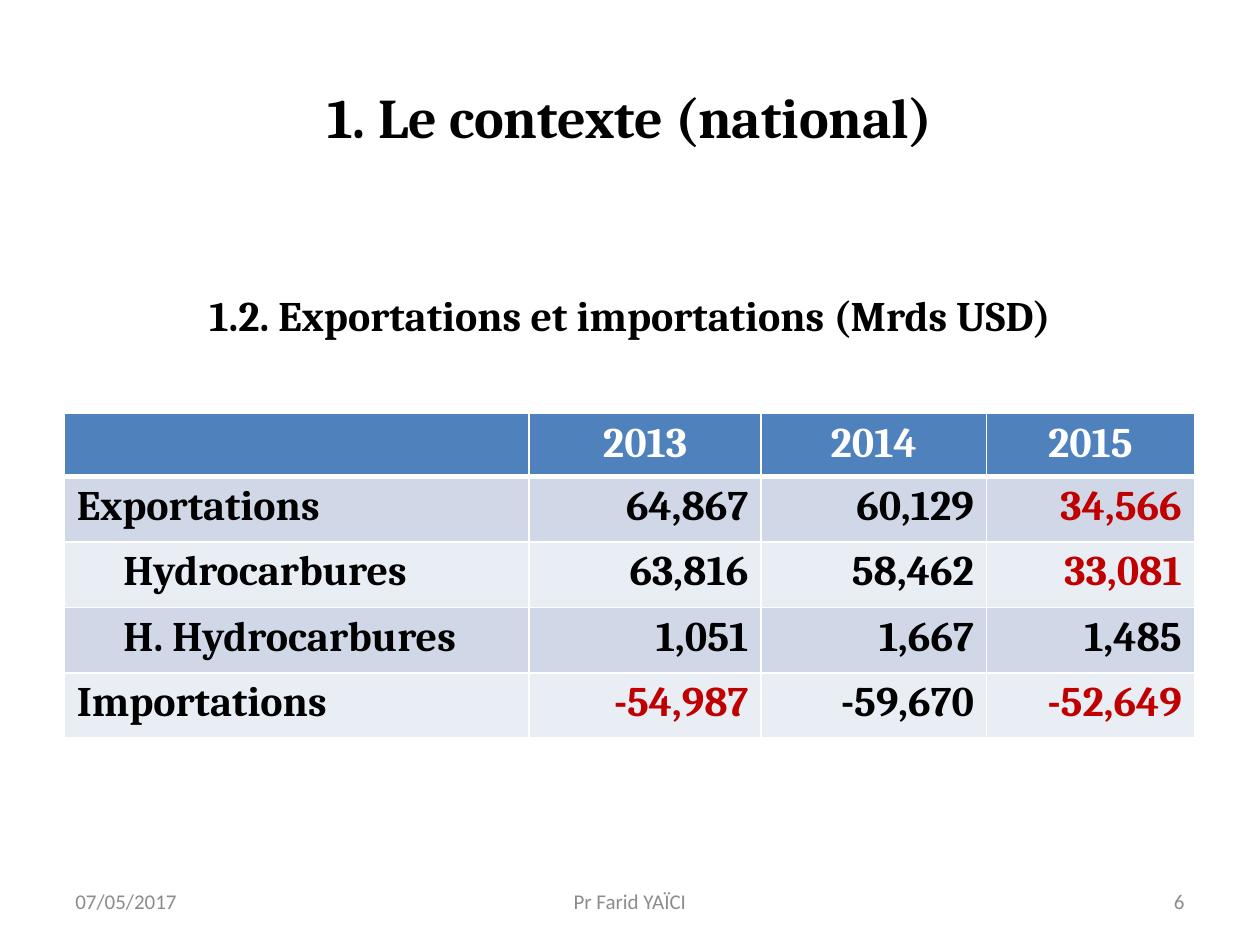
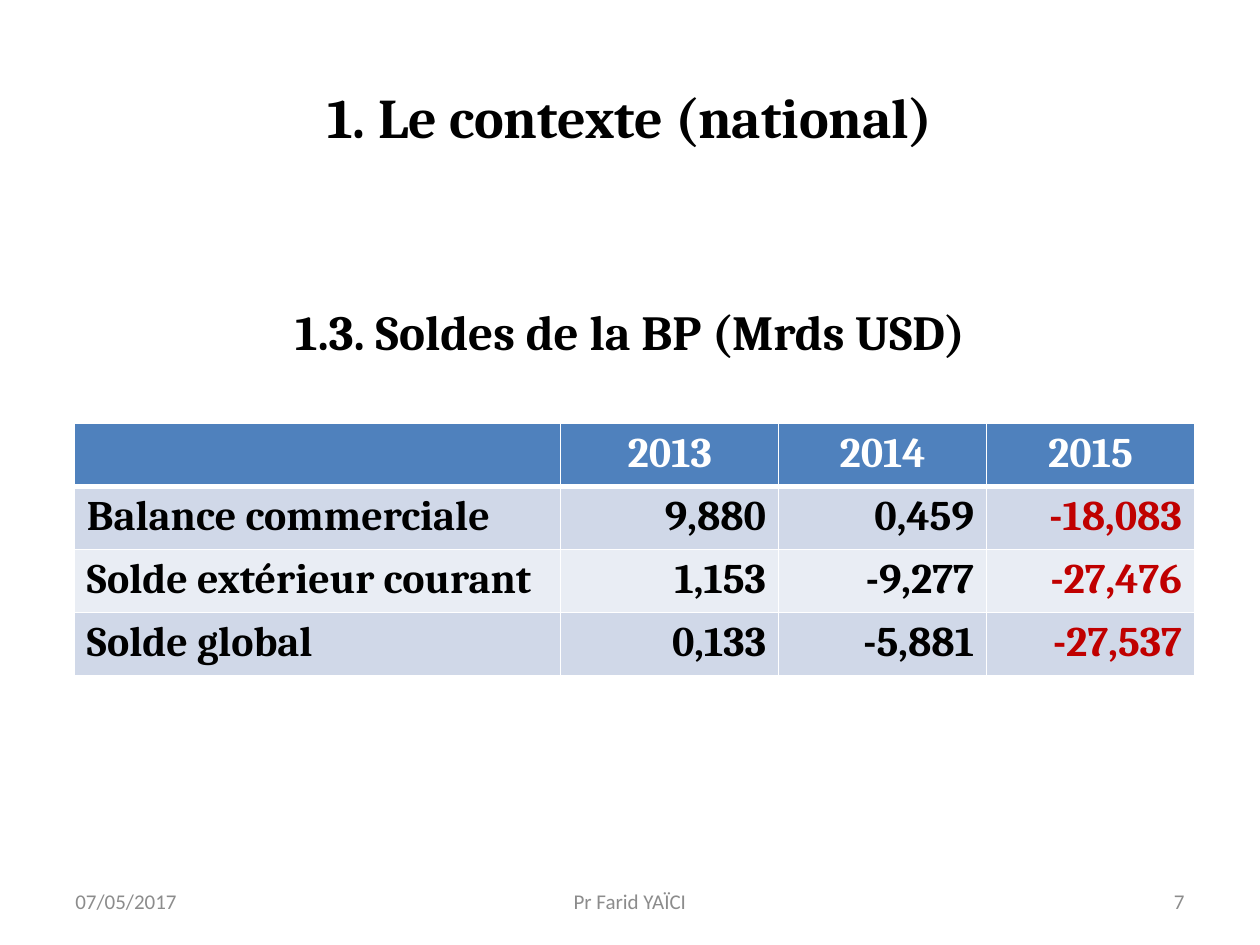
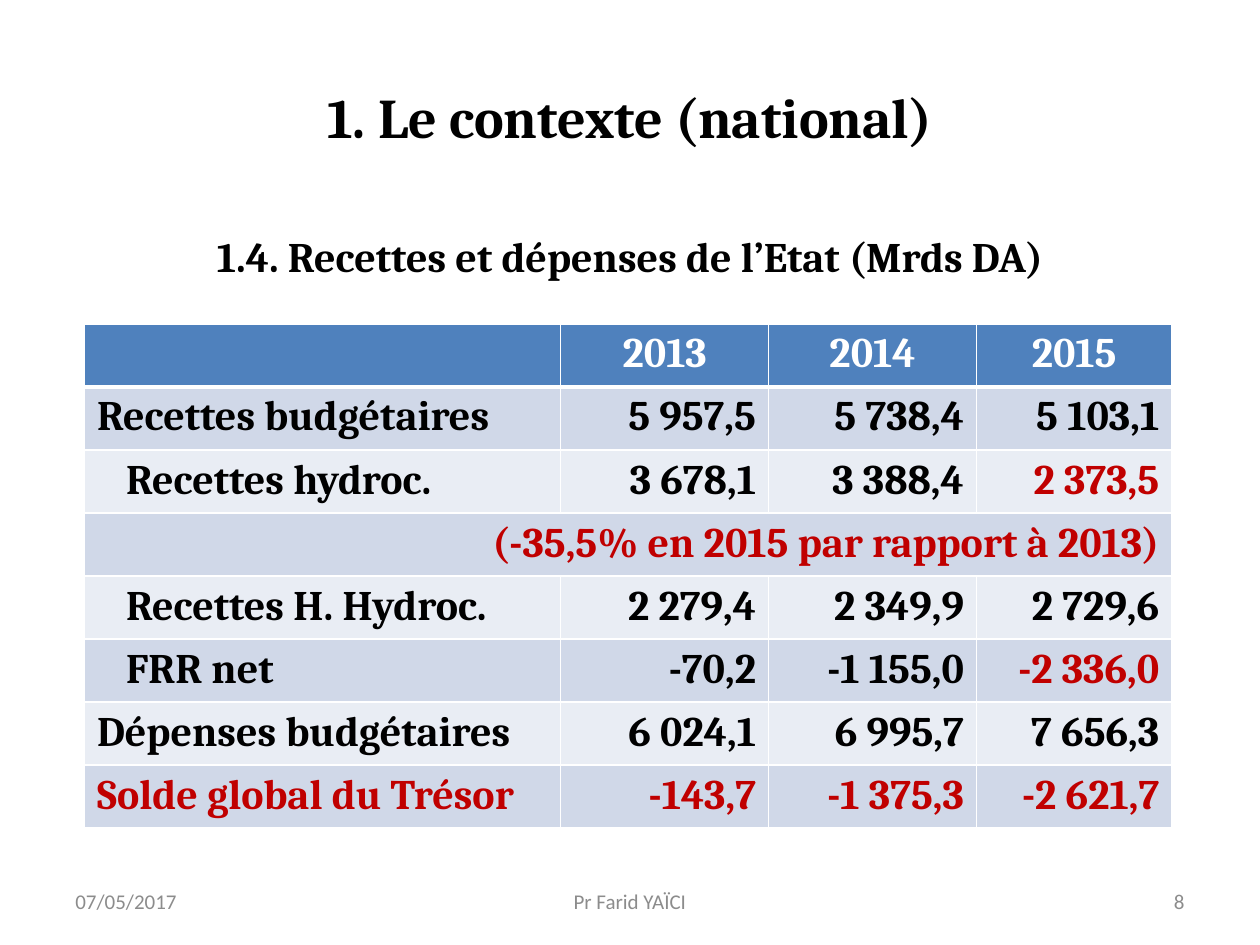
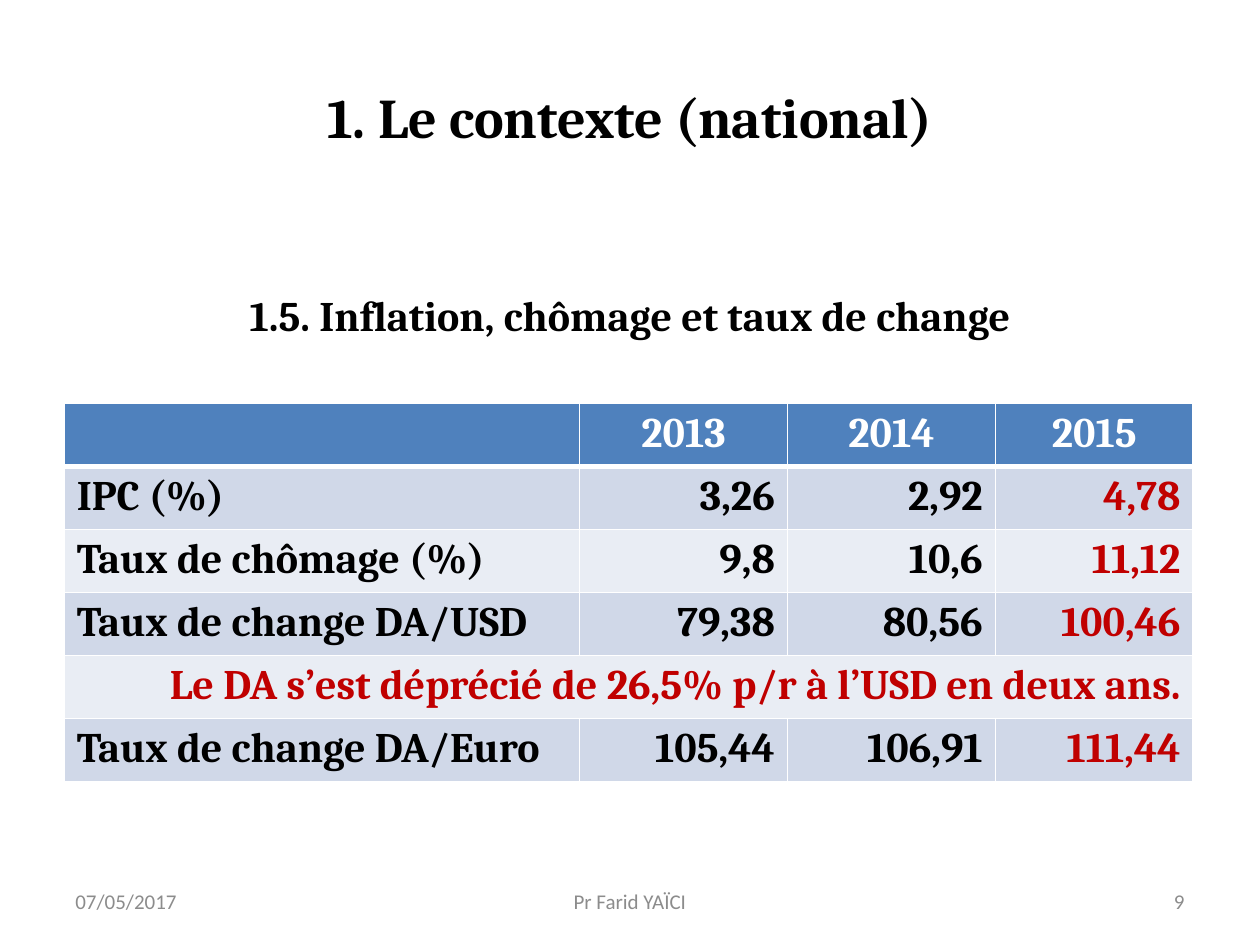
from dataclasses import dataclass

from lxml.etree import SubElement
from pptx import Presentation
from pptx.dml.color import RGBColor
from pptx.enum.text import MSO_ANCHOR, PP_ALIGN
from pptx.oxml.ns import qn
from pptx.util import Inches, Pt

BLACK = RGBColor(0x00, 0x00, 0x00)
WHITE = RGBColor(0xFF, 0xFF, 0xFF)
RED = RGBColor(0xC0, 0x00, 0x00)
GREY = RGBColor(0x8C, 0x8C, 0x8C)
HEADER_BLUE = RGBColor(0x4F, 0x81, 0xBD)
BANDS = (RGBColor(0xD0, 0xD8, 0xE8), RGBColor(0xE9, 0xED, 0xF4))

SERIF, SANS = "Cambria", "Calibri"
LEFT, CENTER, RIGHT = PP_ALIGN.LEFT, PP_ALIGN.CENTER, PP_ALIGN.RIGHT

TITLE = "1. Le contexte (national)"
DATE, AUTHOR = "07/05/2017", "Pr Farid YAÏCI"
YEARS = ("2013", "2014", "2015")
FIRST_PAGE = 6

TITLE_BOX = (0.5, 0.3, 9, 1.25)
BODY_BOX = (0.5, 1.75, 9, 4.95)
FOOTER_BOX = (0.5, 6.95, 9, 0.4)
CELL_MARGIN = 0.1


@dataclass
class Row:
    label: str
    values: tuple = ()       # no values: the label spans the whole row
    red: tuple = ()          # columns in red, 0 being the label
    indent: float = 0


@dataclass
class Topic:
    heading: str
    heading_size: int
    heading_drop: float      # from the top of the body box
    table_box: tuple
    columns: tuple
    header_height: float
    row_height: float
    rows: tuple


TOPICS = (
    Topic("1.2. Exportations et importations (Mrds USD)", 24, 0.55,
          (0.51, 3.28, 8.98, 2.56), (3.69, 1.84, 1.79, 1.65), 0.44, 0.52, (
              Row("Exportations", ("64,867", "60,129", "34,566"), (3,)),
              Row("Hydrocarbures", ("63,816", "58,462", "33,081"), (3,), 0.37),
              Row("H. Hydrocarbures", ("1,051", "1,667", "1,485"), indent=0.37),
              Row("Importations", ("-54,987", "-59,670", "-52,649"), (1, 3)))),
    Topic("1.3. Soldes de la BP (Mrds USD)", 28, 0.64,
          (0.59, 3.36, 8.9, 2), (3.86, 1.73, 1.65, 1.65), 0.41, 0.41, (
              Row("Balance commerciale", ("9,880", "0,459", "-18,083"), (3,)),
              Row("Solde extérieur courant", ("1,153", "-9,277", "-27,476"), (3,)),
              Row("Solde global", ("0,133", "-5,881", "-27,537"), (3,)))),
    Topic("1.4. Recettes et dépenses de l’Etat (Mrds DA)", 24, 0.08,
          (0.67, 2.57, 8.64, 4), (3.78, 1.65, 1.65, 1.55), 0.41, 0.41, (
              Row("Recettes budgétaires", ("5 957,5", "5 738,4", "5 103,1")),
              Row("Recettes hydroc.", ("3 678,1", "3 388,4", "2 373,5"), (3,), 0.23),
              Row("(-35,5% en 2015 par rapport à 2013)", red=(0,)),
              Row("Recettes H. Hydroc.", ("2 279,4", "2 349,9", "2 729,6"), indent=0.23),
              Row("FRR net", ("-70,2", "-1 155,0", "-2 336,0"), (3,), 0.23),
              Row("Dépenses budgétaires", ("6 024,1", "6 995,7", "7 656,3")),
              Row("Solde global du Trésor", ("-143,7", "-1 375,3", "-2 621,7"),
                  (0, 1, 2, 3)))),
    Topic("1.5. Inflation, chômage et taux de change", 24, 0.55,
          (0.51, 3.2, 8.98, 3), (4.09, 1.65, 1.65, 1.57), 0.41, 0.41, (
              Row("IPC (%)", ("3,26", "2,92", "4,78"), (3,)),
              Row("Taux de chômage (%)", ("9,8", "10,6", "11,12"), (3,)),
              Row("Taux de change DA/USD", ("79,38", "80,56", "100,46"), (3,)),
              Row("Le DA s’est déprécié de 26,5% p/r à l’USD en deux ans.", red=(0,)),
              Row("Taux de change DA/Euro", ("105,44", "106,91", "111,44"), (3,)))),
)


def write(frame, text, align, size, color=BLACK, font=SERIF, bold=True):
    paragraph = frame.paragraphs[0]
    paragraph.alignment = align
    run = paragraph.add_run()
    run.text = text
    run.font.name, run.font.size, run.font.bold = font, Pt(size), bold
    run.font.color.rgb = color


def add_text(slide, box, text, align, size, anchor=MSO_ANCHOR.MIDDLE, drop=0.05, **style):
    frame = slide.shapes.add_textbox(*map(Inches, box)).text_frame
    frame.word_wrap = True
    frame.vertical_anchor = anchor
    frame.margin_top = Inches(drop)
    write(frame, text, align, size, **style)


def add_borders(cell, **widths):
    """White cell borders; they must come before the fill in the cell's XML."""
    properties = cell._tc.get_or_add_tcPr()
    for side in "LRTB":
        line = SubElement(properties, qn(f"a:ln{side}"), w=str(Pt(widths.get(side, 1))))
        fill = SubElement(line, qn("a:solidFill"))
        SubElement(fill, qn("a:srgbClr"), val=str(WHITE))


def add_figures(slide, topic):
    """Table of yearly figures: header, banded rows, full-width remarks."""
    frame = slide.shapes.add_table(len(topic.rows) + 1, len(topic.columns),
                                   *map(Inches, topic.table_box))
    table = frame.table
    for column, width in zip(table.columns, topic.columns):
        column.width = Inches(width)
    for number, row in enumerate(table.rows):
        row.height = Inches(topic.row_height if number else topic.header_height)
    frame.height = Inches(topic.table_box[3])

    # Header
    for number in range(len(topic.columns)):
        cell = table.cell(0, number)
        add_borders(cell, B=3)
        cell.fill.solid()
        cell.fill.fore_color.rgb = HEADER_BLUE
        if number:
            write(cell.text_frame, YEARS[number - 1], CENTER, 24, WHITE)

    # Figures
    for line, row in enumerate(topic.rows, 1):
        for number in range(len(topic.columns)):
            cell = table.cell(line, number)
            add_borders(cell, T=3 if line == 1 else 1)
            cell.fill.solid()
            cell.fill.fore_color.rgb = BANDS[(line - 1) % 2]
        if not row.values:
            table.cell(line, 0).merge(table.cell(line, len(topic.columns) - 1))
        for number, text in enumerate((row.label, *row.values)):
            align = RIGHT if number or not row.values else LEFT
            write(table.cell(line, number).text_frame, text, align, 24,
                  RED if number in row.red else BLACK)
        table.cell(line, 0).margin_left = Inches(CELL_MARGIN + row.indent)


def add_footer(slide, box, page):
    """Date on the left, author in the middle, page number on the right."""
    left, top, width, height = box
    side, middle = 2.33, 3.17
    parts = ((left, side, DATE, LEFT),
             (left + (width - middle) / 2, middle, AUTHOR, CENTER),
             (left + width - side, side, str(page), RIGHT))
    for x, part_width, text, align in parts:
        add_text(slide, (x, top, part_width, height), text, align, 12,
                 color=GREY, font=SANS, bold=False)


def add_topic_slide(deck, topic, page):
    slide = deck.slides.add_slide(deck.slide_layouts[6])
    add_text(slide, TITLE_BOX, TITLE, CENTER, 32)
    add_text(slide, BODY_BOX, topic.heading, CENTER, topic.heading_size,
             MSO_ANCHOR.TOP, topic.heading_drop)
    add_figures(slide, topic)
    add_footer(slide, FOOTER_BOX, page)


def main():
    deck = Presentation()
    deck.slide_width, deck.slide_height = Inches(10), Inches(7.5)
    for page, topic in enumerate(TOPICS, FIRST_PAGE):
        add_topic_slide(deck, topic, page)
    deck.save("out.pptx")


if __name__ == "__main__":
    main()
